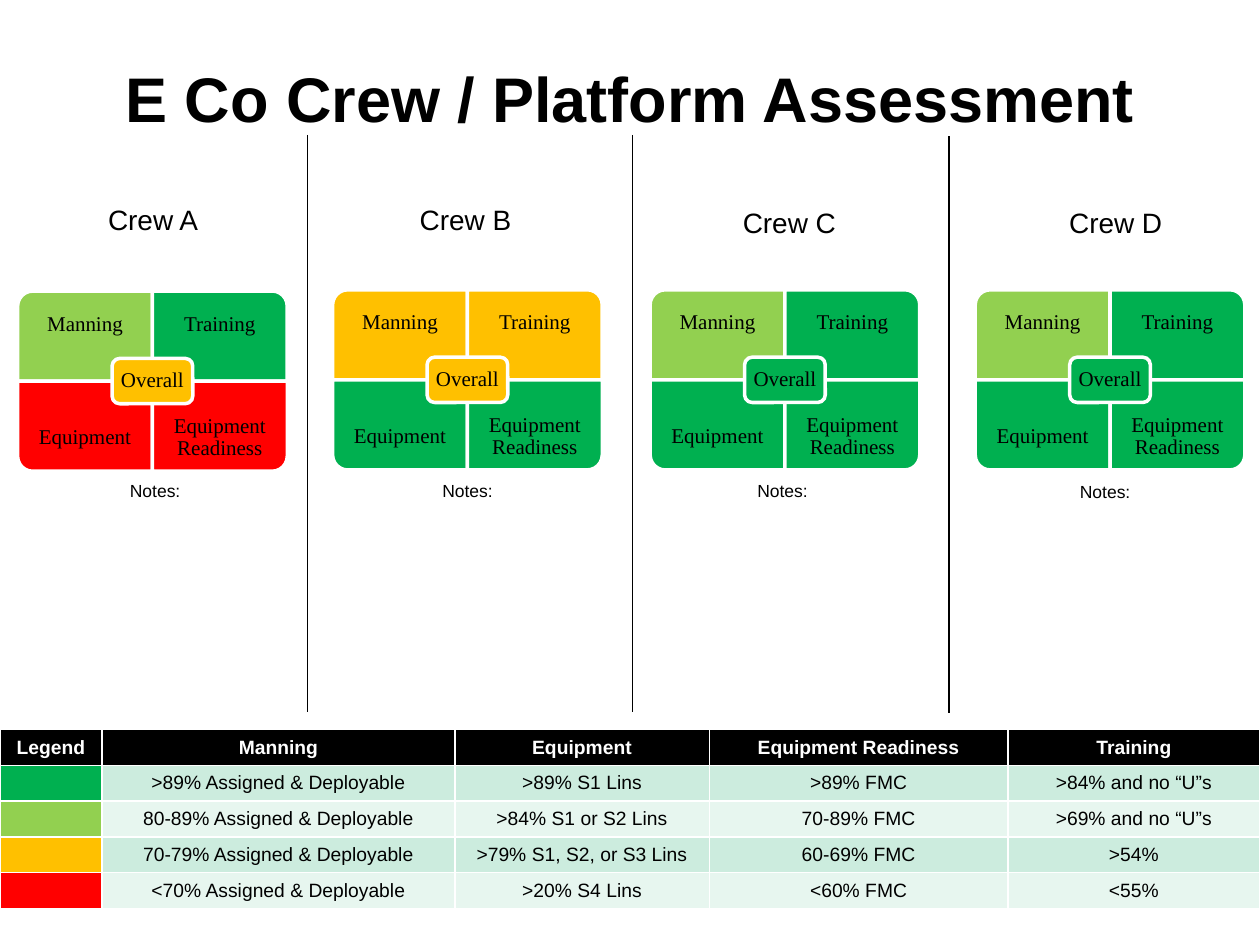
from lxml.etree import SubElement
from pptx import Presentation
from pptx.dml.color import RGBColor
from pptx.enum.shapes import MSO_CONNECTOR, MSO_SHAPE
from pptx.enum.text import MSO_ANCHOR, MSO_AUTO_SIZE, PP_ALIGN
from pptx.oxml.ns import qn
from pptx.util import Inches, Pt

BLACK = RGBColor(0x00, 0x00, 0x00)
WHITE = RGBColor(0xFF, 0xFF, 0xFF)
GREEN = RGBColor(0x00, 0xB0, 0x50)
LIME = RGBColor(0x92, 0xD0, 0x50)
AMBER = RGBColor(0xFF, 0xC0, 0x00)
RED = RGBColor(0xFF, 0x00, 0x00)
BAND_DARK = RGBColor(0xCC, 0xEC, 0xDE)
BAND_LIGHT = RGBColor(0xE7, 0xF6, 0xEF)

COLS, ROWS = 100, 75  # slide grid
TILE_W, TILE_H = 10.7, 7.15
LABEL_H = 5.3
BADGE_W, BADGE_H = 6.4, 3.6

# Name, label (left, top, width), matrix (left, top), notes (left, top),
# ratings: manning, training, equipment, equipment readiness, overall
CREWS = [
    ("Crew A", (0, 15.6, 24.3), (1.4, 23.1), (0.4, 37.6),
     (LIME, GREEN, RED, RED, AMBER)),
    ("Crew B", (24.8, 15.6, 24.3), (26.4, 23), (25.2, 37.6),
     (AMBER, AMBER, GREEN, GREEN, AMBER)),
    ("Crew C", (51, 15.8, 23.3), (51.6, 23), (50.2, 37.6),
     (LIME, GREEN, GREEN, GREEN, GREEN)),
    ("Crew D", (77.2, 15.8, 22.7), (77.4, 23), (75.8, 37.7),
     (LIME, GREEN, GREEN, GREEN, GREEN)),
]
DIVIDERS = [(24.4, 10.7), (50.2, 10.7), (75.3, 10.8)]

# Text, column, row, rotation that puts the round corner outside
TILES = [("Manning", 0, 0, 270), ("Training", 1, 0, 0),
         ("Equipment", 0, 1, 180), ("Equipment Readiness", 1, 1, 90)]

LEGEND_COLS = [8.1, 28, 20.2, 23.7, 20]
LEGEND = [
    ["Legend", "Manning", "Equipment", "Equipment Readiness", "Training"],
    ["", ">89% Assigned & Deployable", ">89% S1 Lins", ">89% FMC", ">84% and no “U”s"],
    ["", "80-89% Assigned & Deployable", ">84% S1 or S2 Lins", "70-89% FMC",
     ">69% and no “U”s"],
    ["", "70-79% Assigned & Deployable", ">79% S1, S2, or S3 Lins", "60-69% FMC", ">54%"],
    ["", "<70% Assigned & Deployable", ">20% S4 Lins", "<60% FMC", "<55%"],
]
LEGEND_KEYS = [GREEN, LIME, AMBER, RED]


class Board:
    sans, serif = "Arial", "Times New Roman"

    def __init__(self, prs):
        self.col = prs.slide_width / COLS
        self.row = prs.slide_height / ROWS
        self.s = prs.slides.add_slide(prs.slide_layouts[5])

    def box(self, x, y, w, h):
        return (round(x * self.col), round(y * self.row),
                round(w * self.col), round(h * self.row))

    def add_text(self, tf, text, size, font=sans, color=BLACK, bold=False):
        p = tf.paragraphs[0]
        p.alignment = PP_ALIGN.CENTER
        r = p.add_run()
        r.text = text
        r.font.size, r.font.name, r.font.bold = Pt(size), font, bold
        r.font.color.rgb = color
        return p

    def title(self, text, x, y, w, h):
        sp = self.s.shapes.title
        sp.left, sp.top, sp.width, sp.height = self.box(x, y, w, h)
        sp.text_frame.vertical_anchor = MSO_ANCHOR.MIDDLE
        self.add_text(sp.text_frame, text, 36, bold=True)

    def caption(self, text, size, x, y, w, h):
        tf = self.s.shapes.add_textbox(*self.box(x, y, w, h)).text_frame
        tf.word_wrap = True
        tf.auto_size = MSO_AUTO_SIZE.SHAPE_TO_FIT_TEXT
        self.add_text(tf, text, size)

    def divider(self, x, y, h):
        left, top, _, height = self.box(x, y, 0, h)
        line = self.s.shapes.add_connector(
            MSO_CONNECTOR.STRAIGHT, left, top, left, top + height)
        line.line.color.rgb = BLACK
        line.line.width = Pt(1)
        SubElement(line._element.spPr, qn("a:effectLst"))

    def block(self, group, kind, fill, x, y, w, h, rotation=0):
        if rotation % 180:  # swap the sides about the centre
            x, y, w, h = x + (w - h) / 2, y + (h - w) / 2, h, w
        sp = group.shapes.add_shape(kind, *self.box(x, y, w, h))
        sp.rotation = rotation
        sp.shadow.inherit = False
        sp.fill.solid()
        sp.fill.fore_color.rgb = fill
        sp.line.color.rgb = WHITE
        sp.line.width = Pt(2)

    def block_label(self, group, text, inset, x, y, w, h):
        tf = group.shapes.add_textbox(*self.box(x, y, w, h)).text_frame
        tf.word_wrap = True
        tf.vertical_anchor = MSO_ANCHOR.MIDDLE
        tf.margin_left = tf.margin_right = Inches(inset)
        tf.margin_top = tf.margin_bottom = Inches(inset)
        p = self.add_text(tf, text, 12, self.serif)
        p.line_spacing = 0.9

    def matrix(self, x, y, ratings):
        group = self.s.shapes.add_group_shape()
        for (text, col, row, rotation), fill in zip(TILES, ratings):
            left, top = x + col * TILE_W, y + row * TILE_H
            self.block(group, MSO_SHAPE.ROUND_1_RECTANGLE, fill,
                       left, top, TILE_W, TILE_H, rotation)
            self.block_label(group, text, 0.09, left,
                             top + row * (TILE_H - LABEL_H), TILE_W, LABEL_H)
        # Overall badge in the centre
        left, top = x + TILE_W - BADGE_W / 2, y + TILE_H - BADGE_H / 2
        self.block(group, MSO_SHAPE.ROUNDED_RECTANGLE, ratings[-1],
                   left, top, BADGE_W, BADGE_H)
        self.block_label(group, "Overall", 0.05,
                         left + 0.15, top + 0.2, BADGE_W - 0.3, BADGE_H - 0.4)

    def legend(self, x, y, w, h):
        table = self.s.shapes.add_table(
            len(LEGEND), len(LEGEND_COLS), *self.box(x, y, w, h)).table
        table.horz_banding = False
        for column, width in zip(table.columns, LEGEND_COLS):
            column.width = round(width * self.col)
        for i, texts in enumerate(LEGEND):
            for j, text in enumerate(texts):
                cell = table.cell(i, j)
                cell.vertical_anchor = MSO_ANCHOR.MIDDLE
                if i == 0:
                    fill = BLACK
                elif j == 0:
                    fill = LEGEND_KEYS[i - 1]
                else:
                    fill = BAND_DARK if i % 2 else BAND_LIGHT
                cell.fill.solid()
                cell.fill.fore_color.rgb = fill
                if text:
                    self.add_text(cell.text_frame, text, 11,
                                  color=BLACK if i else WHITE, bold=i == 0)
                else:  # a small text size keeps the empty cell low
                    p = cell.text_frame.paragraphs[0]
                    SubElement(p._p, qn("a:endParaRPr")).set("sz", "1100")


def main():
    prs = Presentation()
    prs.slide_width, prs.slide_height = Inches(10), Inches(7.5)
    board = Board(prs)
    board.title("E Co Crew / Platform Assessment", 5, 3, 90, 9.5)

    # Crew columns
    for x, y in DIVIDERS:
        board.divider(x, y, 45.8)
    for name, label, matrix, notes, ratings in CREWS:
        board.caption(name, 16, *label, 3.7)
        board.matrix(*matrix, ratings)
        board.caption("Notes: ", 10, *notes, 24.2, 4.4)

    # Rating legend
    board.legend(0, 57.9, 100, 14.2)
    prs.save("out.pptx")


if __name__ == "__main__":
    main()
